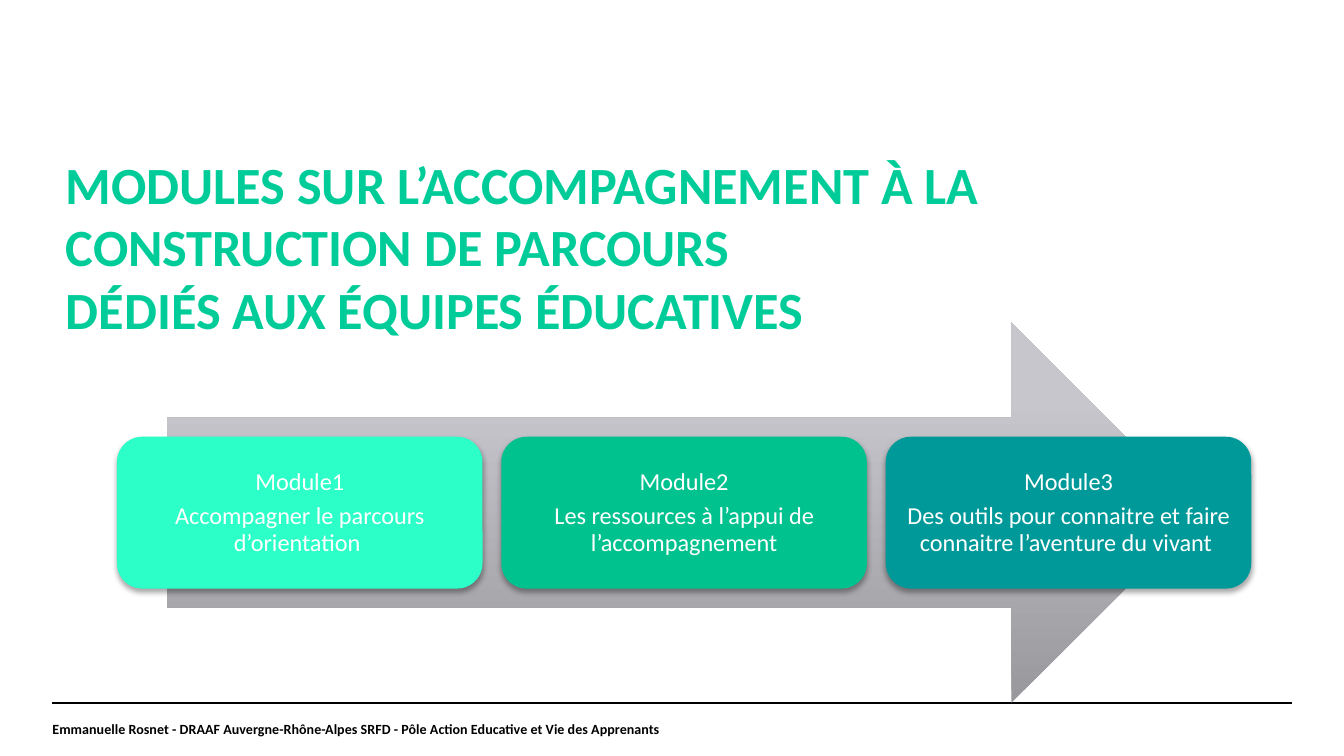
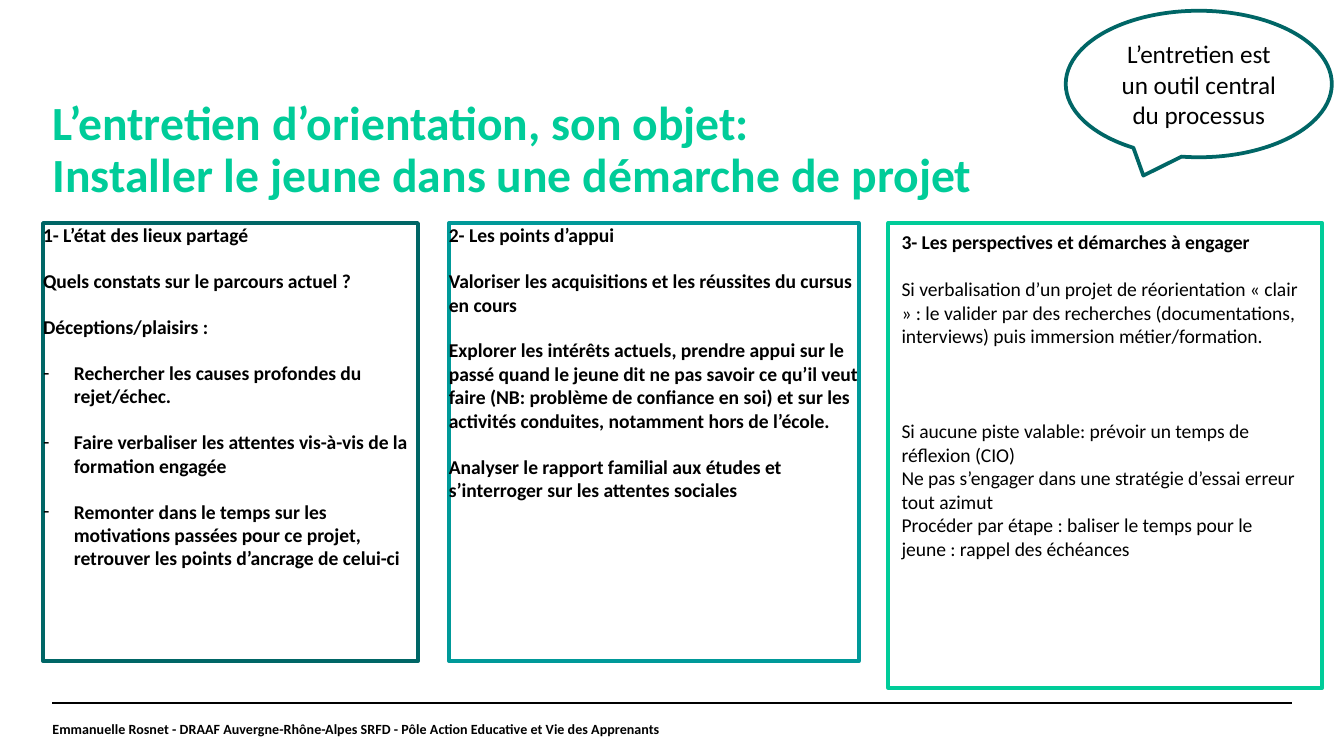
"""Build two slides on guidance modules and the guidance interview."""
from lxml import etree
from pptx import Presentation
from pptx.dml.color import RGBColor
from pptx.enum.shapes import MSO_CONNECTOR, MSO_SHAPE
from pptx.enum.text import MSO_ANCHOR, MSO_AUTO_SIZE, PP_ALIGN
from pptx.oxml import parse_xml
from pptx.oxml.ns import nsdecls, qn
from pptx.util import Inches, Pt

LEFT, CENTER = PP_ALIGN.LEFT, PP_ALIGN.CENTER
TOP, MIDDLE = MSO_ANCHOR.TOP, MSO_ANCHOR.MIDDLE
NO_FIT = MSO_AUTO_SIZE.NONE
RECT, ROUND_RECT = MSO_SHAPE.RECTANGLE, MSO_SHAPE.ROUNDED_RECTANGLE
ARROW, CALLOUT = MSO_SHAPE.RIGHT_ARROW, MSO_SHAPE.OVAL_CALLOUT
STRAIGHT = MSO_CONNECTOR.STRAIGHT

FONT = "Calibri"
COLORS = {
    "white": "FFFFFF",
    "black": "000000",
    "green": "00CC99",
    "teal": "009999",
    "dark_teal": "006666",
    "mint": "2CFFC8",
    "emerald": "00C28F",
}
ARROW_STOPS = [(0, "98989D"), (80, "C6C6CC"), (100, "C7C7CD")]
MARGIN = 0.39
FOOTER_TOP = 5.23
FOOTER = ("Emmanuelle Rosnet - DRAAF Auvergne-Rhône-Alpes SRFD - "
          "Pôle Action Educative et Vie des Apprenants")

MODULES = [
    ("Module1", "Accompagner le parcours d’orientation ", "mint"),
    ("Module2", "Les ressources à l’appui de l’accompagnement", "emerald"),
    ("Module3", "Des outils pour connaitre et faire connaitre l’aventure du vivant ",
     "teal"),
]
REVIEW = [
    "1- L’état des lieux partagé",
    "Quels constats sur le parcours actuel ?",
    "Déceptions/plaisirs :",
]
REVIEW_DASHES = [
    "Rechercher les causes profondes du rejet/échec.",
    "Faire verbaliser les attentes vis-à-vis de la formation engagée",
    "Remonter dans le temps sur les motivations passées pour ce projet, "
    "retrouver les points d’ancrage de celui-ci",
]
SUPPORTS = [
    "2- Les points d’appui",
    "Valoriser les acquisitions et les réussites du cursus en cours",
    "Explorer les intérêts actuels, prendre appui sur le passé quand le jeune dit "
    "ne pas savoir ce qu’il veut faire (NB: problème de confiance en soi) et sur "
    "les activités conduites, notamment hors de l’école.",
    "Analyser le rapport familial aux études et s’interroger sur les attentes sociales",
]
PROSPECTS = [
    ("3- Les perspectives et démarches à engager", 0),
    ("Si verbalisation d’un projet de réorientation « clair » : le valider par des "
     "recherches (documentations, interviews) puis immersion métier/formation.", 12.8),
    ("Si aucune piste valable: prévoir un temps de réflexion (CIO)", 38.4),
    ("Ne pas s’engager dans une stratégie d’essai erreur tout azimut", 0),
    ("Procéder par étape : baliser le temps pour le jeune : rappel des échéances", 0),
]


def rgb(name):
    """Return the named colour."""
    return RGBColor.from_string(COLORS[name])


def place(sp, left, top, width, height):
    """Move and size a shape, in inches."""
    sp.left, sp.top = Inches(left), Inches(top)
    sp.width, sp.height = Inches(width), Inches(height)


def paint(sp, fill, line=None):
    """Give a shape a solid fill and an optional 2 pt outline."""
    sp.fill.solid()
    sp.fill.fore_color.rgb = rgb(fill)
    if line:
        sp.line.color.rgb = rgb(line)
        sp.line.width = Pt(2)
    else:
        sp.line.fill.background()


def write(sp, lines, size, color="black", bold=False, align=LEFT, anchor=TOP,
          inset=(0.1, 0.05)):
    """Fill a shape with paragraphs of one style and return them."""
    tf = sp.text_frame
    tf.word_wrap = True
    tf.auto_size = NO_FIT
    tf.vertical_anchor = anchor
    tf.margin_left = tf.margin_right = Inches(inset[0])
    tf.margin_top = tf.margin_bottom = Inches(inset[1])
    tf.text = "\n".join(lines)
    for p in tf.paragraphs:
        p.alignment = align
        p.space_before = Pt(0)
        for r in p.runs:
            r.font.name = FONT
            r.font.size = Pt(size)
            r.font.bold = bold
            r.font.color.rgb = rgb(color)
    return tf.paragraphs


def set_bullet(p, char=None):
    """Set a hanging bullet character, or remove the bullet."""
    pPr = p._p.get_or_add_pPr()
    indent = Inches(0.23) if char else 0
    pPr.set("marL", str(indent))
    pPr.set("indent", str(-indent))
    if char:
        etree.SubElement(pPr, qn("a:buChar")).set("char", char)
    else:
        etree.SubElement(pPr, qn("a:buNone"))


def add_preset(s, kind, left, top, width, height):
    """Add a preset shape without shadow."""
    sp = s.shapes.add_shape(kind, Inches(left), Inches(top), Inches(width),
                            Inches(height))
    sp.shadow.inherit = False
    return sp


def add_footer(s):
    """Add the rule and the credit line at the foot of a slide."""
    rule = s.shapes.add_connector(STRAIGHT, Inches(MARGIN), Inches(FOOTER_TOP),
                                  Inches(10 - MARGIN), Inches(FOOTER_TOP))
    rule.line.color.rgb = rgb("black")
    rule.line.width = Pt(0.8)
    etree.SubElement(rule._element.spPr, qn("a:effectLst"))
    box = s.shapes.add_textbox(Inches(MARGIN), Inches(FOOTER_TOP), Inches(6.46),
                               Inches(0.39))
    write(box, [FOOTER], 7.5, bold=True, anchor=MIDDLE, inset=(0, 0))


def add_title(s, lines, size, box, inset):
    """Place and fill the slide title."""
    title = s.shapes.title
    place(title, *box)
    return write(title, lines, size, "green", True, inset=inset)


def add_arrow(s):
    """Add the grey gradient arrow behind the modules."""
    sp = add_preset(s, ARROW, 1.24, 2.4, 7.7, 2.83)
    sp.line.fill.background()
    stops = "".join(
        f'<a:gs pos="{pos * 1000}"><a:srgbClr val="{color}"/></a:gs>'
        for pos, color in ARROW_STOPS)
    gradient = parse_xml(
        f'<a:gradFill {nsdecls("a")} rotWithShape="1"><a:gsLst>{stops}</a:gsLst>'
        '<a:lin ang="16200000" scaled="0"/></a:gradFill>')
    sp._element.spPr.find(qn("a:prstGeom")).addnext(gradient)


def add_module(s, left, name, text, fill):
    """Add one module card with a soft shadow."""
    sp = add_preset(s, ROUND_RECT, left, 3.25, 2.72, 1.13)
    paint(sp, fill)
    sp._element.spPr.find(qn("a:effectLst")).append(parse_xml(
        f'<a:outerShdw {nsdecls("a")} blurRad="{Pt(3.1)}" dist="{Pt(1.8)}" '
        'dir="5400000" rotWithShape="0"><a:srgbClr val="000000">'
        '<a:alpha val="35000"/></a:srgbClr></a:outerShdw>'))
    for p in write(sp, [name, text], 13, "white", align=CENTER, anchor=MIDDLE,
                   inset=(0.05, 0.05)):
        p.line_spacing = 0.9
        p.space_after = Pt(4.55)


def add_column(sp, left, width, line, lines, dashes=()):
    """Format a body placeholder as an outlined column."""
    place(sp, left, 1.66, width, 3.26)
    paint(sp, "white", line)
    paragraphs = write(sp, [*lines, *dashes], 10.5, bold=True, inset=(0, 0))
    for i, p in enumerate(paragraphs):
        set_bullet(p, "-" if i >= len(lines) else None)
        p.space_before = Pt(4 if i else 0)
        p.space_after = Pt(8)


def add_prospects(s):
    """Add the third column, with its bold heading."""
    sp = add_preset(s, RECT, 6.61, 1.66, 3.23, 3.46)
    paint(sp, "white", "green")
    paragraphs = write(sp, [text for text, _ in PROSPECTS], 10.5)
    for p, (_, gap) in zip(paragraphs, PROSPECTS):
        p.space_before = Pt(gap)
    paragraphs[0].runs[0].font.bold = True


def build_modules(prs):
    """Build the slide of the three modules."""
    s = prs.slides.add_slide(prs.slide_layouts[5])
    add_footer(s)
    add_title(s, ["MODULES SUR L’ACCOMPAGNEMENT À LA CONSTRUCTION DE PARCOURS",
                  "DÉDIÉS AUX ÉQUIPES ÉDUCATIVES"],
              28, (MARGIN, 1.08, 9.27, 1.51), (0.1, 0.05))
    add_arrow(s)
    for i, module in enumerate(MODULES):
        add_module(s, 0.87 + 2.86 * i, *module)


def build_interview(prs):
    """Build the slide on the guidance interview."""
    s = prs.slides.add_slide(prs.slide_layouts[3])
    add_footer(s)
    title = add_title(s, ["L’entretien d’orientation, son objet:\v"
                          "Installer le jeune dans une démarche de projet"],
                      25.5, (MARGIN, 0.74, 9.21, 1.1), (0, 0))
    title[0].line_spacing = 0.9
    add_column(s.placeholders[1], 0.32, 2.79, "dark_teal", REVIEW, REVIEW_DASHES)
    add_column(s.placeholders[2], 3.34, 3.05, "teal", SUPPORTS)
    add_prospects(s)
    callout = add_preset(s, CALLOUT, 7.93, 0.08, 1.98, 1.09)
    paint(callout, "white", "dark_teal")
    write(callout, ["L’entretien est un outil central du processus"], 13.5,
          align=CENTER, anchor=MIDDLE)


def main():
    """Create and save the presentation."""
    prs = Presentation()
    prs.slide_width = Inches(10)
    prs.slide_height = prs.slide_width * 9 // 16
    build_modules(prs)
    build_interview(prs)
    prs.save("out.pptx")


if __name__ == "__main__":
    main()
